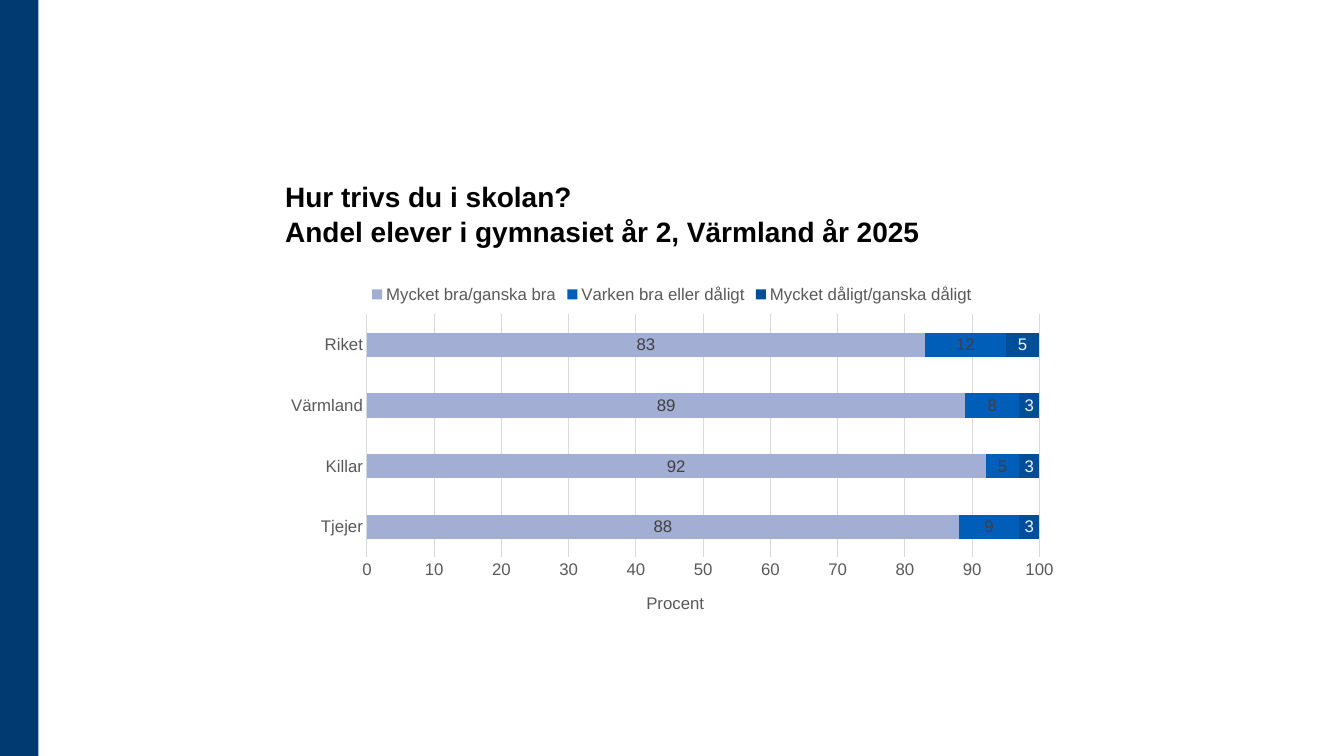
from dataclasses import dataclass

from lxml import etree
from pptx import Presentation
from pptx.chart.data import CategoryChartData
from pptx.dml.color import RGBColor
from pptx.enum import chart as ch, shapes, text
from pptx.oxml.ns import qn
from pptx.util import Inches, Pt


@dataclass(frozen=True)
class Theme:
    font: str = "Arial"
    title_size: int = 20
    chart_size: int = 12
    black: str = "000000"
    band: str = "003A70"
    axis_text: str = "595959"
    grid: str = "D9D9D9"


CHART_W, CHART_H = 7.87, 3.54
CATEGORIES = ["Tjejer", "Killar", "Värmland", "Riket"]
# name, values, fill colour, label colour
SERIES = [
    ("Mycket bra/ganska bra", (88, 92, 89, 83), "A2AED4", "404040"),
    ("Varken bra eller dåligt", (9, 5, 8, 12), "005EB8", "404040"),
    ("Mycket dåligt/ganska dåligt", (3, 3, 3, 5), "004E99", "F2F2F2"),
]


def set_layout(parent, index, inner=False, **inches):
    """Place a chart part by x, y, w, h in inches from the chart's corner."""
    for old in parent.findall(qn("c:layout")):
        parent.remove(old)
    layout = etree.Element(qn("c:layout"))
    parent.insert(index, layout)
    manual = etree.SubElement(layout, qn("c:manualLayout"))
    if inner:
        etree.SubElement(manual, qn("c:layoutTarget"), val="inner")
    for key in "xy":
        etree.SubElement(manual, qn(f"c:{key}Mode"), val="edge")
    for key, value in inches.items():
        whole = CHART_W if key in "xw" else CHART_H
        etree.SubElement(manual, qn(f"c:{key}"), val=f"{value / whole:.4f}")


class Deck:
    def __init__(self, theme):
        self.theme = theme
        self.prs = Presentation()
        self.prs.slide_width, self.prs.slide_height = Inches(13.33), Inches(7.5)
        self.s = self.prs.slides.add_slide(self.prs.slide_layouts[6])

    def style(self, font, size, color, bold=False):
        font.name, font.size, font.bold = self.theme.font, Pt(size), bold
        font.color.rgb = RGBColor.from_string(color)

    def line(self, fmt, color):
        fmt.line.color.rgb = RGBColor.from_string(color)
        fmt.line.width = Pt(0.75)

    def rect(self, x, y, w, h, color):
        sp = self.s.shapes.add_shape(shapes.MSO_SHAPE.RECTANGLE, *map(Inches, (x, y, w, h)))
        sp.shadow.inherit = False
        sp.fill.solid()
        sp.fill.fore_color.rgb = RGBColor.from_string(color)
        sp.line.fill.background()

    def title(self, x, y, w, h, lines):
        tf = self.s.shapes.add_textbox(*map(Inches, (x, y, w, h))).text_frame
        tf.word_wrap = True
        tf.vertical_anchor = text.MSO_ANCHOR.BOTTOM
        p = tf.paragraphs[0]
        p.line_spacing = 1.05
        for i, content in enumerate(lines):
            if i:
                p.add_line_break()
            r = p.add_run()
            r.text = content
            self.style(r.font, self.theme.title_size, self.theme.black, bold=True)

    def stacked_bars(self, x, y, categories, series, axis_title):
        t = self.theme
        data = CategoryChartData(number_format="0")
        data.categories = categories
        for name, values, *_ in series:
            data.add_series(name, values)
        chart = self.s.shapes.add_chart(
            ch.XL_CHART_TYPE.BAR_STACKED, *map(Inches, (x, y, CHART_W, CHART_H)), data).chart
        self.style(chart.font, t.chart_size, t.black)
        chart.has_title = False
        chart.has_legend = True
        chart.legend.position = ch.XL_LEGEND_POSITION.TOP
        chart.legend.include_in_layout = False
        self.style(chart.legend.font, t.chart_size, t.axis_text)

        plot = chart.plots[0]
        plot.gap_width, plot.overlap, plot.vary_by_categories = 150, 100, False
        for ser, (_, _, fill, label) in zip(plot.series, series):
            ser.format.fill.solid()
            ser.format.fill.fore_color.rgb = RGBColor.from_string(fill)
            labels = ser.data_labels
            labels.show_value = True
            labels.position = ch.XL_LABEL_POSITION.CENTER
            labels.number_format, labels.number_format_is_linked = "0", False
            self.style(labels.font, t.chart_size, label)

        cat, val = chart.category_axis, chart.value_axis
        for axis in (cat, val):
            axis.major_tick_mark = axis.minor_tick_mark = ch.XL_TICK_MARK.NONE
            self.style(axis.tick_labels.font, t.chart_size, t.axis_text)
        self.line(cat.format, t.grid)
        val.format.line.fill.background()
        val.minimum_scale, val.maximum_scale, val.major_unit = 0, 100, 10
        val.tick_labels.number_format = "0"
        val.tick_labels.number_format_is_linked = False
        val.has_major_gridlines = True
        self.line(val.major_gridlines.format, t.grid)

        r = val.axis_title.text_frame.paragraphs[0].add_run()
        r.text = axis_title
        self.style(r.font, t.chart_size, t.axis_text)
        set_layout(val.axis_title._element, 1, x=3.65, y=3.13)
        plot_area = chart._chartSpace.chart.plotArea
        set_layout(plot_area, 0, inner=True, x=0.91, y=0.4, w=6.67, h=2.41)


def main():
    theme = Theme()
    deck = Deck(theme)
    deck.rect(0, 0, 0.38, 7.5, theme.band)
    deck.title(2.73, 1.06, 7.87, 1.45,
               ["Hur trivs du i skolan?", "Andel elever i gymnasiet år 2, Värmland år 2025"])
    deck.stacked_bars(2.73, 2.72, CATEGORIES, SERIES, "Procent")
    deck.prs.save("out.pptx")


if __name__ == "__main__":
    main()
